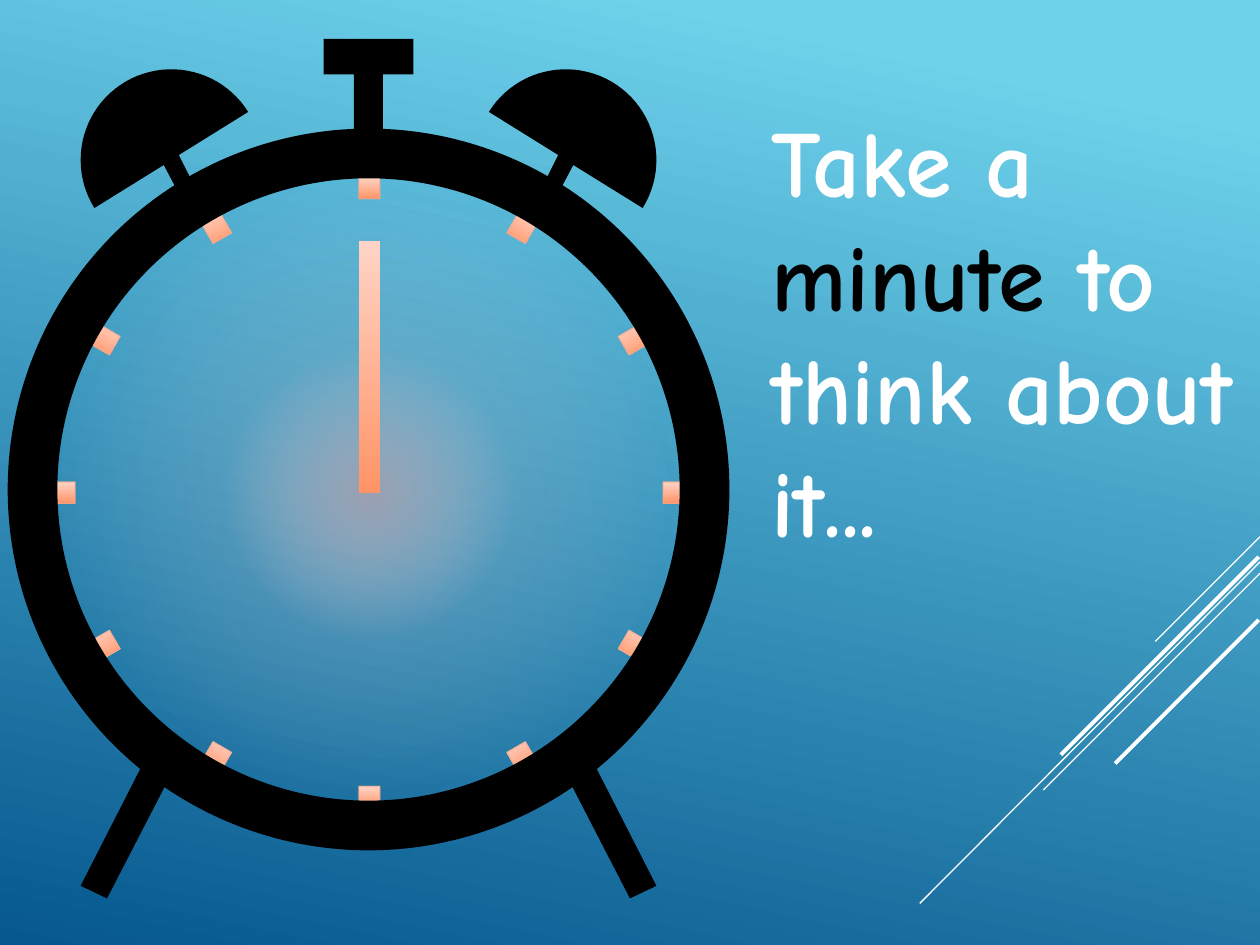
from dataclasses import dataclass
from math import cos, radians, sin
from typing import NamedTuple

from lxml.etree import SubElement
from pptx import Presentation
from pptx.dml.color import RGBColor
from pptx.dml.fill import FillFormat
from pptx.enum.shapes import MSO_CONNECTOR, MSO_SHAPE
from pptx.enum.text import MSO_ANCHOR, MSO_AUTO_SIZE, PP_ALIGN
from pptx.oxml import parse_xml
from pptx.oxml.ns import nsdecls, qn
from pptx.shapes.autoshape import Shape
from pptx.slide import Slide
from pptx.util import Pt


@dataclass(frozen=True)
class Theme:
    sky: str = "6ED2EB"
    sea: str = "06588E"
    ink: str = "000000"
    white: str = "FFFFFF"
    peach: str = "FFD4C6"
    orange: str = "FF9467"
    tick_edge: str = "EEA78F"
    font: str = "Comic Neue"
    message_size: float = 54
    hairline: float = 0.75
    stroke: float = 2.25


class Point(NamedTuple):
    x: float
    y: float


class Streak(NamedTuple):
    start: Point
    end: Point
    weight: float


class GlowStop(NamedTuple):
    position: int
    color: str
    opacity: int


class Phrase(NamedTuple):
    text: str
    color: str


THEME = Theme()
CENTER = Point(211, 281.5)
RING_CENTER = Point(210.6, 279.7)
FACE_SIZE, RING_SIZE, RING_THICKNESS = 360, 412.4, 28.4
TICK_SIZE, TICK_RADIUS, HAND_LENGTH = 12.24, 174, 144
BELL_CENTER, BELL_RADIUS, BELL_TILT = Point(97.9, 91.4), 51.8, 32

STREAKS = [
    Streak(Point(720, 306.7), Point(660.2, 366.5), THEME.hairline),
    Streak(Point(720, 321.1), Point(525.6, 516.2), THEME.hairline),
    Streak(Point(720, 327.6), Point(596.2, 451.4), THEME.hairline),
    Streak(Point(719.3, 318.2), Point(606.2, 431.3), THEME.stroke),
    Streak(Point(719.3, 354.2), Point(637.2, 436.3), THEME.stroke),
]
GLOW = [GlowStop(0, "9BA0B1", 100), GlowStop(33, "C3C5CF", 19), GlowStop(70, "E2E3E7", 0)]
MESSAGE = [
    Phrase("Take a ", THEME.white),
    Phrase("minute ", THEME.ink),
    Phrase("to think about it...", THEME.white),
]
LEG = [Point(46.1, 506.2), Point(61.2, 513.4), Point(96.5, 445), Point(81.4, 437)]
BELL_STEM = [Point(93.6, 94.3), Point(105.8, 117.4), Point(114.5, 113), Point(102.2, 88.6)]
HALF_BUTTON = [Point(185, 22.3), Point(185, 42.5), Point(202.3, 42.5), Point(202.3, 84.2)]


def color(value: str) -> RGBColor:
    return RGBColor.from_string(value)


def mirror(points: list[Point]) -> list[Point]:
    """Reflect points across the vertical axis of the clock."""
    return [Point(2 * RING_CENTER.x - point.x, point.y) for point in points]


def fill_gradient(fill: FillFormat, first: str, last: str, start: float, angle: float) -> None:
    """Two-colour linear gradient; angle runs clockwise from left to right."""
    fill.gradient()
    fill.gradient_angle = 360 - angle
    for stop, position, value in zip(fill.gradient_stops, (start, 1), (first, last)):
        stop.position = position
        stop.color.rgb = color(value)


def add_centered(slide: Slide, kind: MSO_SHAPE, center: Point, width: float, height: float) -> Shape:
    shape = slide.shapes.add_shape(
        kind, Pt(center.x - width / 2), Pt(center.y - height / 2), Pt(width), Pt(height)
    )
    shape.shadow.inherit = False
    shape.line.fill.background()
    return shape


def fill_ink(shape: Shape) -> None:
    shape.fill.solid()
    shape.fill.fore_color.rgb = color(THEME.ink)


def add_silhouette(slide: Slide, points: list[Point]) -> None:
    first, *others = [(Pt(point.x), Pt(point.y)) for point in points]
    builder = slide.shapes.build_freeform(*first)
    builder.add_line_segments(others, close=True)
    silhouette = builder.convert_to_shape()
    silhouette.shadow.inherit = False
    silhouette.line.fill.background()
    fill_ink(silhouette)


def bell_outline() -> list[Point]:
    angles = [radians(-BELL_TILT - step) for step in range(0, 181, 4)]
    dome = [
        Point(BELL_CENTER.x + BELL_RADIUS * cos(a), BELL_CENTER.y + BELL_RADIUS * sin(a))
        for a in angles
    ]
    return dome + BELL_STEM


def add_streak(slide: Slide, streak: Streak) -> None:
    line = slide.shapes.add_connector(
        MSO_CONNECTOR.STRAIGHT, *(Pt(value) for value in (*streak.start, *streak.end))
    )
    line.line.color.rgb = color(THEME.white)
    line.line.width = Pt(streak.weight)
    SubElement(line._element.spPr, qn("a:effectLst"))


def add_face(slide: Slide) -> None:
    face = add_centered(slide, MSO_SHAPE.OVAL, CENTER, FACE_SIZE, FACE_SIZE)
    stops = "".join(
        f'<a:gs pos="{stop.position * 1000}"><a:srgbClr val="{stop.color}">'
        f'<a:alpha val="{stop.opacity * 1000}"/></a:srgbClr></a:gs>'
        for stop in GLOW
    )
    glow = parse_xml(
        f'<a:gradFill {nsdecls("a")} rotWithShape="1"><a:gsLst>{stops}</a:gsLst>'
        '<a:path path="circle"><a:fillToRect l="50000" t="50000" r="50000" b="50000"/>'
        "</a:path></a:gradFill>"
    )
    face._element.spPr.find(qn("a:prstGeom")).addnext(glow)


def add_tick(slide: Slide, hour: int) -> None:
    angle = hour * 30
    center = Point(
        CENTER.x + TICK_RADIUS * sin(radians(angle)), CENTER.y - TICK_RADIUS * cos(radians(angle))
    )
    tick = add_centered(slide, MSO_SHAPE.RECTANGLE, center, TICK_SIZE, TICK_SIZE)
    # A quarter turn leaves a square unchanged, so the light side can stay on top.
    tick.rotation = (angle + 45) % 90 - 45
    fill_gradient(tick.fill, THEME.peach, THEME.orange, 0, 90)
    tick.line.color.rgb = color(THEME.tick_edge)
    tick.line.width = Pt(THEME.hairline)
    edge = tick.line._ln.find(".//" + qn("a:srgbClr"))
    SubElement(edge, qn("a:alpha"), val="60000")


def add_clock(slide: Slide) -> None:
    add_silhouette(slide, HALF_BUTTON + mirror(HALF_BUTTON)[::-1])
    for part in (LEG, bell_outline()):
        add_silhouette(slide, part)
        add_silhouette(slide, mirror(part))
    add_face(slide)
    for hour in range(12):
        add_tick(slide, hour)
    hand_center = Point(CENTER.x, CENTER.y - HAND_LENGTH / 2)
    hand = add_centered(slide, MSO_SHAPE.RECTANGLE, hand_center, TICK_SIZE, HAND_LENGTH)
    fill_gradient(hand.fill, THEME.peach, THEME.orange, 0, 90)
    ring = add_centered(slide, MSO_SHAPE.DONUT, RING_CENTER, RING_SIZE, RING_SIZE)
    ring.adjustments[0] = RING_THICKNESS / RING_SIZE
    fill_ink(ring)


def write_message(slide: Slide) -> None:
    title = slide.shapes.title
    title.left, title.top, title.width, title.height = Pt(433.4), Pt(55.4), Pt(279.4), Pt(334)
    frame = title.text_frame
    frame.word_wrap = True
    frame.auto_size = MSO_AUTO_SIZE.SHAPE_TO_FIT_TEXT
    frame.vertical_anchor = MSO_ANCHOR.TOP
    paragraph = frame.paragraphs[0]
    paragraph.alignment = PP_ALIGN.LEFT
    for phrase in MESSAGE:
        run = paragraph.add_run()
        run.text = phrase.text
        run.font.name = THEME.font
        run.font.size = Pt(THEME.message_size)
        run.font.bold = True
        run.font.color.rgb = color(phrase.color)


def main() -> None:
    presentation = Presentation()
    presentation.slide_width, presentation.slide_height = Pt(720), Pt(540)
    slide = presentation.slides.add_slide(presentation.slide_layouts[5])
    fill_gradient(slide.background.fill, THEME.sky, THEME.sea, 0.1, 102)
    for streak in STREAKS:
        add_streak(slide, streak)
    add_clock(slide)
    write_message(slide)
    presentation.save("out.pptx")


if __name__ == "__main__":
    main()
